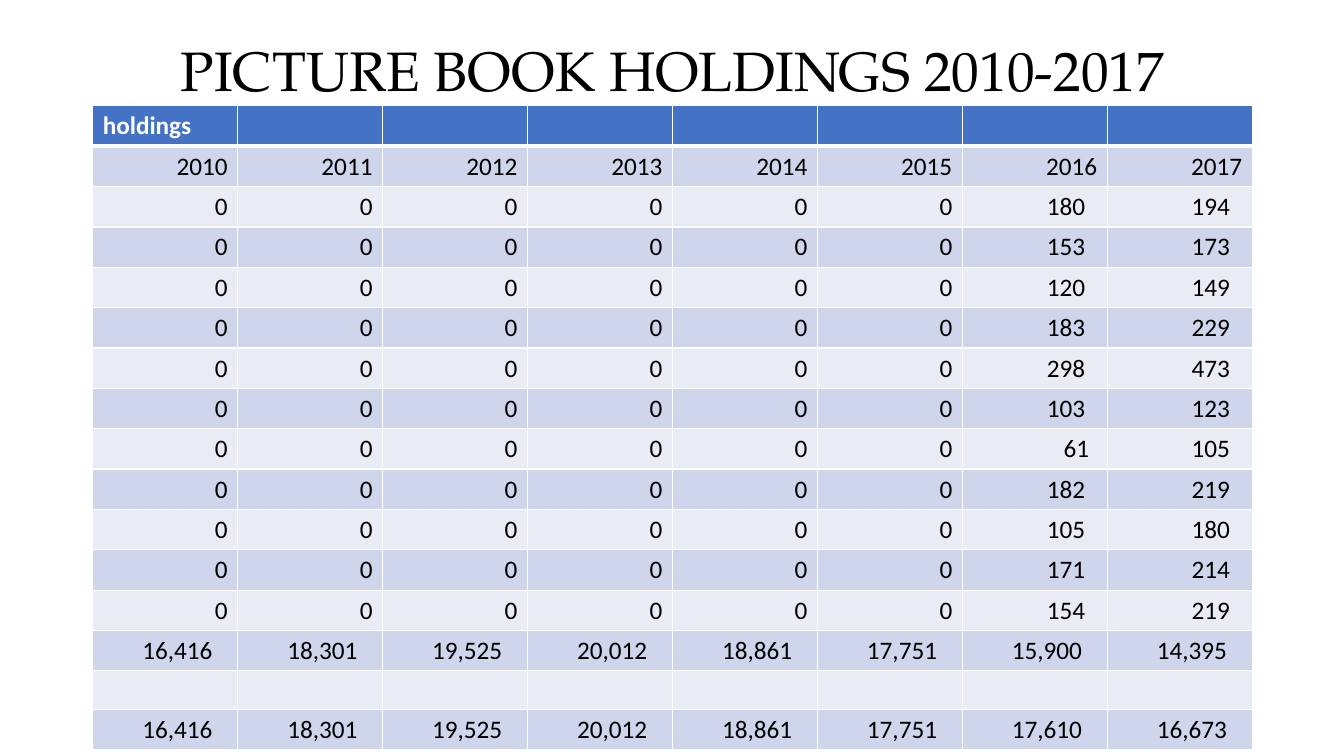
from lxml import etree
from pptx import Presentation
from pptx.dml.color import RGBColor
from pptx.enum.text import MSO_ANCHOR, PP_ALIGN
from pptx.oxml.ns import qn
from pptx.util import Inches, Pt

MIDDLE = MSO_ANCHOR.MIDDLE
LEFT, CENTER, RIGHT = PP_ALIGN.LEFT, PP_ALIGN.CENTER, PP_ALIGN.RIGHT

COLORS = {
    "text": "000000",
    "white": "FFFFFF",
    "header": "4472C4",
    "dark_band": "CFD5EA",
    "light_band": "E9EBF5",
}
TITLE_FONT, BODY_FONT = "TeX Gyre Pagella", "Calibri"
ROW_HEIGHT, BLANK_HEIGHT = 0.4, 0.38
NUMBER_INSETS = {2: 0.18, 3: 0.22, 6: 0.25}

YEARS = [str(year) for year in range(2010, 2018)]
RECENT = [
    ("180", "194"), ("153", "173"), ("120", "149"), ("183", "229"),
    ("298", "473"), ("103", "123"), ("61", "105"), ("182", "219"),
    ("105", "180"), ("171", "214"), ("154", "219"),
]
EARLIER = ["16,416", "18,301", "19,525", "20,012", "18,861", "17,751"]
ROWS = [
    ["holdings"] + [""] * 7,
    YEARS,
    *[["0"] * 6 + list(pair) for pair in RECENT],
    EARLIER + ["15,900", "14,395"],
    [""] * 8,
    EARLIER + ["17,610", "16,673"],
]


class SlideBuilder:
    """Hold the style and the current slide, and add its elements."""

    def __init__(self, prs):
        self.s = prs.slides.add_slide(prs.slide_layouts[6])

    def color(self, name):
        return RGBColor.from_string(COLORS[name])

    def run(self, p, text, font, size, color, bold=False):
        r = p.add_run()
        r.text = text
        r.font.name = font
        r.font.size = Pt(size)
        r.font.bold = bold
        r.font.color.rgb = self.color(color)

    def title(self, text, x, y, w, h):
        tf = self.s.shapes.add_textbox(Inches(x), Inches(y), Inches(w), Inches(h)).text_frame
        tf.word_wrap = True
        tf.vertical_anchor = MIDDLE
        p = tf.paragraphs[0]
        p.alignment = CENTER
        p.line_spacing = 0.9
        self.run(p, text, TITLE_FONT, 39.6, "text")

    def borders(self, cell, top, bottom):
        tcPr = cell._tc.get_or_add_tcPr()
        widths = {"a:lnL": 1, "a:lnR": 1, "a:lnT": top, "a:lnB": bottom}
        for i, (tag, width) in enumerate(widths.items()):
            ln = etree.Element(qn(tag), w=str(Pt(width)))
            fill = etree.SubElement(ln, qn("a:solidFill"))
            etree.SubElement(fill, qn("a:srgbClr"), val=COLORS["white"])
            tcPr.insert(i, ln)

    def cell(self, cell, text, row):
        header = row == 0
        band = "header" if header else "dark_band" if row % 2 else "light_band"
        cell.fill.solid()
        cell.fill.fore_color.rgb = self.color(band)
        cell.vertical_anchor = MIDDLE
        self.borders(cell, 3 if row == 1 else 1, 3 if header else 1)
        if text:
            p = cell.text_frame.paragraphs[0]
            p.alignment = LEFT if header else RIGHT
            if not header:
                cell.margin_right = Inches(NUMBER_INSETS.get(len(text), 0.1))
            self.run(p, text, BODY_FONT, 18, "white" if header else "text", header)

    def table(self, rows, x, y, w):
        height = ROW_HEIGHT * len(rows)
        table = self.s.shapes.add_table(
            len(rows), len(rows[0]), Inches(x), Inches(y), Inches(w), Inches(height)
        ).table
        table.horz_banding = False
        for i, values in enumerate(rows):
            blank = not any(values)
            table.rows[i].height = Inches(BLANK_HEIGHT if blank else ROW_HEIGHT)
            for j, text in enumerate(values):
                cell = table.cell(i, j)
                self.cell(cell, text, i)
                if blank:
                    cell.margin_top = cell.margin_bottom = Inches(0.03)


def main():
    prs = Presentation()
    prs.slide_width, prs.slide_height = Inches(13.33), Inches(7.5)
    slide = SlideBuilder(prs)
    slide.title("PICTURE BOOK HOLDINGS 2010-2017", 0.92, 0.4, 11.5, 0.65)
    slide.table(ROWS, 0.92, 1.05, 11.5)
    prs.save("out.pptx")


if __name__ == "__main__":
    main()
